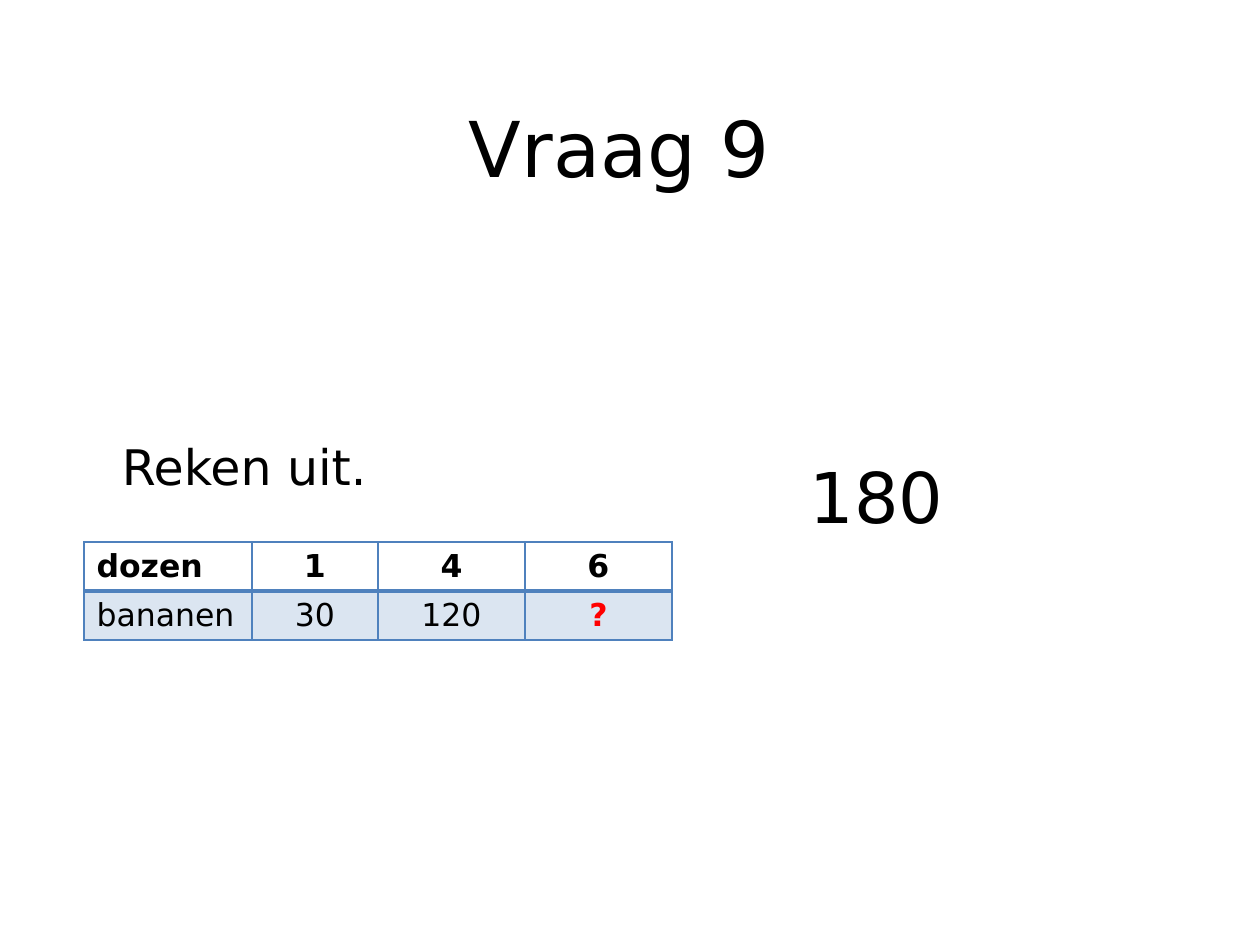
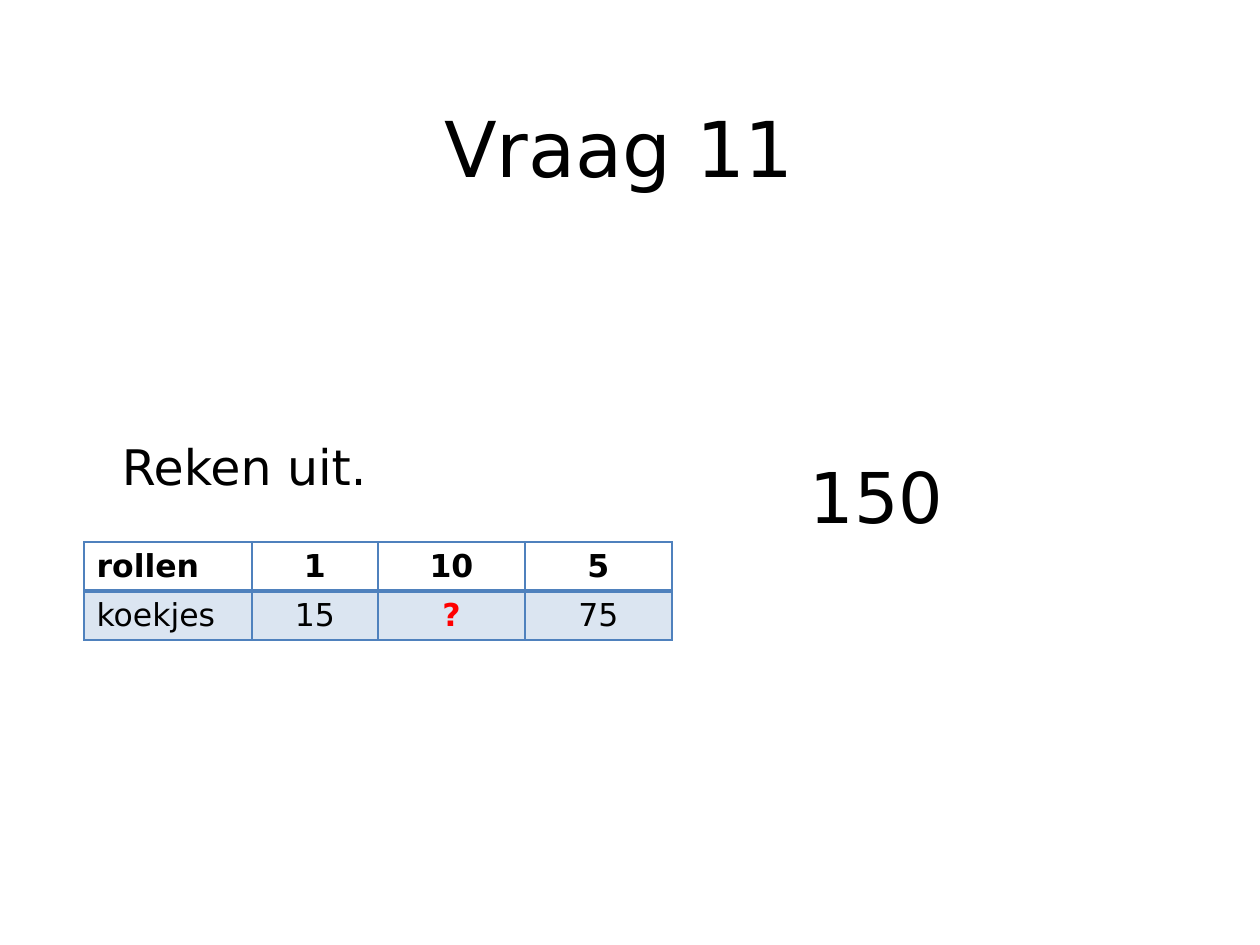
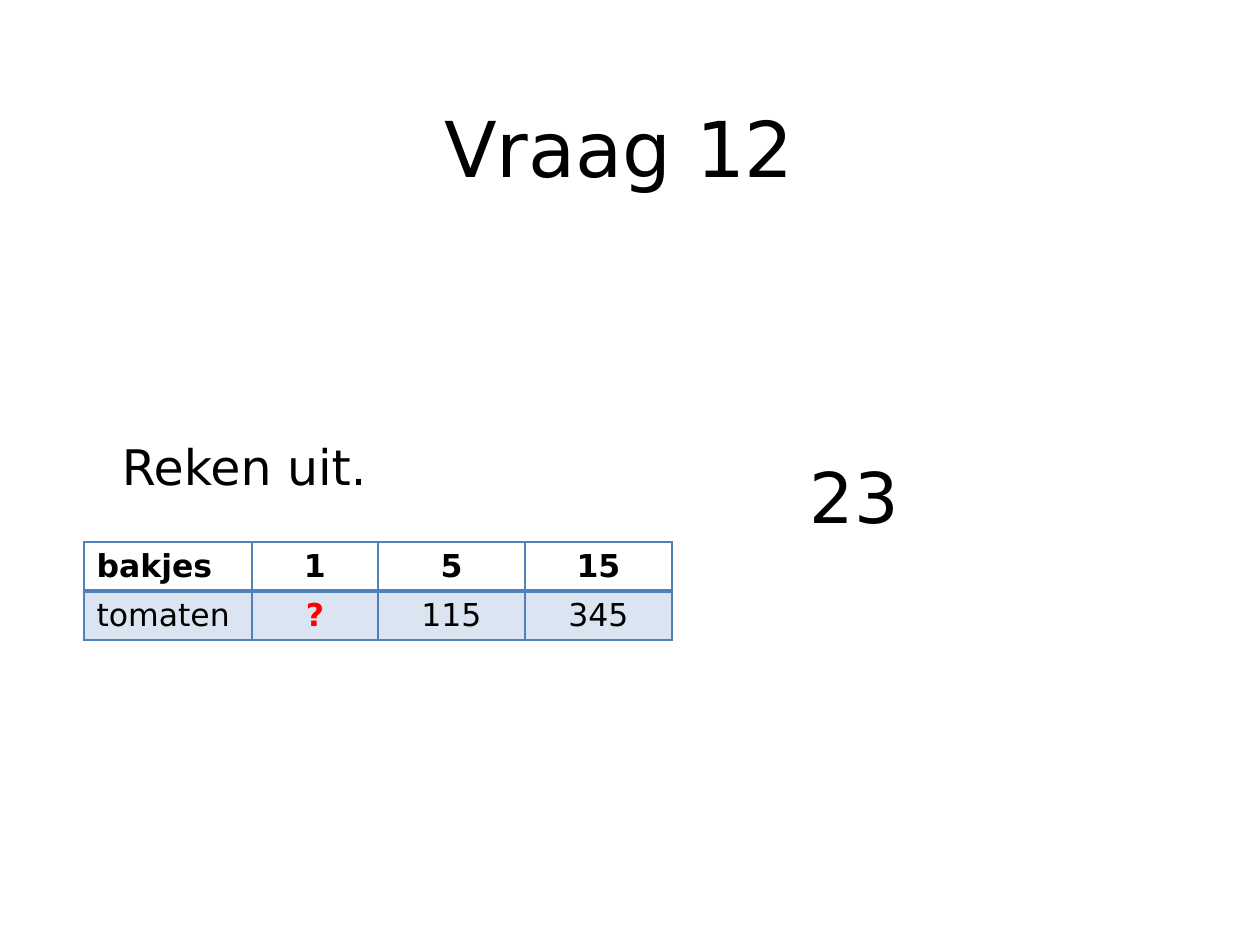
from dataclasses import dataclass
from lxml.etree import SubElement
from pptx import Presentation
from pptx.dml.color import RGBColor
from pptx.enum.shapes import MSO_SHAPE
from pptx.enum.text import MSO_ANCHOR, MSO_AUTO_SIZE, PP_ALIGN
from pptx.oxml.ns import qn
from pptx.util import Pt


@dataclass(frozen=True)
class Theme:
    font: str = "DejaVu Sans"
    ink: str = "000000"
    paper: str = "FFFFFF"
    blue: str = "4F81BD"
    red: str = "FF0000"
    title: int = 44
    answer: int = 40
    task: int = 28
    cell: int = 18
    tint: int = 20
    thin: int = 1
    thick: int = 2


class Deck:
    def __init__(self, theme):
        self.theme = theme
        self.show = Presentation()
        self.show.slide_width, self.show.slide_height = Pt(720), Pt(540)
        self.slide = None

    def add_text(self, para, text, size, color=None, bold=False):
        run = para.add_run()
        run.text = text
        font = run.font
        font.name, font.size, font.bold = self.theme.font, Pt(size), bold
        font.color.rgb = RGBColor.from_string(color or self.theme.ink)

    def place(self, shape, left, top, width, height):
        shape.left, shape.top = Pt(left), Pt(top)
        shape.width, shape.height = Pt(width), Pt(height)

    def start(self, title):
        self.slide = self.show.slides.add_slide(self.show.slide_layouts[5])
        head = self.slide.shapes.title
        self.place(head, 48, 26, 612, 116)
        frame = head.text_frame
        frame.auto_size = MSO_AUTO_SIZE.NONE
        frame.vertical_anchor = MSO_ANCHOR.MIDDLE
        para = frame.paragraphs[0]
        para.alignment = PP_ALIGN.CENTER
        self.add_text(para, title, self.theme.title)

    def panel(self, left, width, text, size, lift=0):
        box = self.slide.shapes.add_shape(
            MSO_SHAPE.RECTANGLE, Pt(left), Pt(128), Pt(width), Pt(316))
        box.shadow.inherit = False
        box.fill.solid()
        box.fill.fore_color.rgb = RGBColor.from_string(self.theme.paper)
        box.line.fill.background()
        frame = box.text_frame
        frame.word_wrap = True
        frame.vertical_anchor = MSO_ANCHOR.MIDDLE
        frame.margin_bottom = Pt(3.6 + lift)
        para = frame.paragraphs[0]
        para.alignment = PP_ALIGN.LEFT
        para.line_spacing = 0.9
        props = para._p.get_or_add_pPr()
        props.set("marL", str(Pt(15)))
        props.set("indent", str(Pt(13)))
        self.add_text(para, text, size)

    def edge(self, cell, side, width):
        props = cell._tc.get_or_add_tcPr()
        line = SubElement(props, qn(f"a:ln{side}"), w=str(Pt(width)))
        fill = SubElement(line, qn("a:solidFill"))
        SubElement(fill, qn("a:srgbClr"), val=self.theme.blue)

    def shade(self, cell):
        cell.fill.solid()
        cell.fill.fore_color.rgb = RGBColor.from_string(self.theme.blue)
        color = cell._tc.tcPr.find(f"{qn('a:solidFill')}/{qn('a:srgbClr')}")
        SubElement(color, qn("a:alpha"), val=str(self.theme.tint * 1000))

    def table(self, rows):
        theme = self.theme
        widths = (96, 72, 84, 84)
        grid = self.slide.shapes.add_table(
            len(rows), len(widths), Pt(48), Pt(309.6),
            Pt(sum(widths)), Pt(56)).table
        grid.first_row = grid.horz_banding = False
        for col, width in zip(grid.columns, widths):
            col.width = Pt(width)
        for y, row in enumerate(rows):
            top, base = ((theme.thin, theme.thick) if y == 0
                         else (theme.thick, theme.thin))
            for x, text in enumerate(row):
                cell = grid.cell(y, x)
                sides = zip("LRTB", (theme.thin, theme.thin, top, base))
                for side, width in sides:
                    self.edge(cell, side, width)
                if y:
                    self.shade(cell)
                else:
                    cell.fill.background()
                para = cell.text_frame.paragraphs[0]
                para.alignment = PP_ALIGN.CENTER if x else PP_ALIGN.LEFT
                asked = text == "?"
                self.add_text(para, text, theme.cell,
                              theme.red if asked else theme.ink,
                              bold=asked or y == 0)

    def quiz(self, title, answer, rows):
        self.start(title)
        self.panel(34.6, 374.4, "Reken uit.", self.theme.task, lift=35)
        self.panel(427.7, 249, answer, self.theme.answer)
        self.table(rows)


def main():
    deck = Deck(Theme())
    deck.quiz("Vraag 9", "180", (("dozen", "1", "4", "6"),
                                 ("bananen", "30", "120", "?")))
    deck.quiz("Vraag 11", "150", (("rollen", "1", "10", "5"),
                                  ("koekjes", "15", "?", "75")))
    deck.quiz("Vraag 12", "23", (("bakjes", "1", "5", "15"),
                                 ("tomaten", "?", "115", "345")))
    deck.show.save("out.pptx")


if __name__ == "__main__":
    main()
